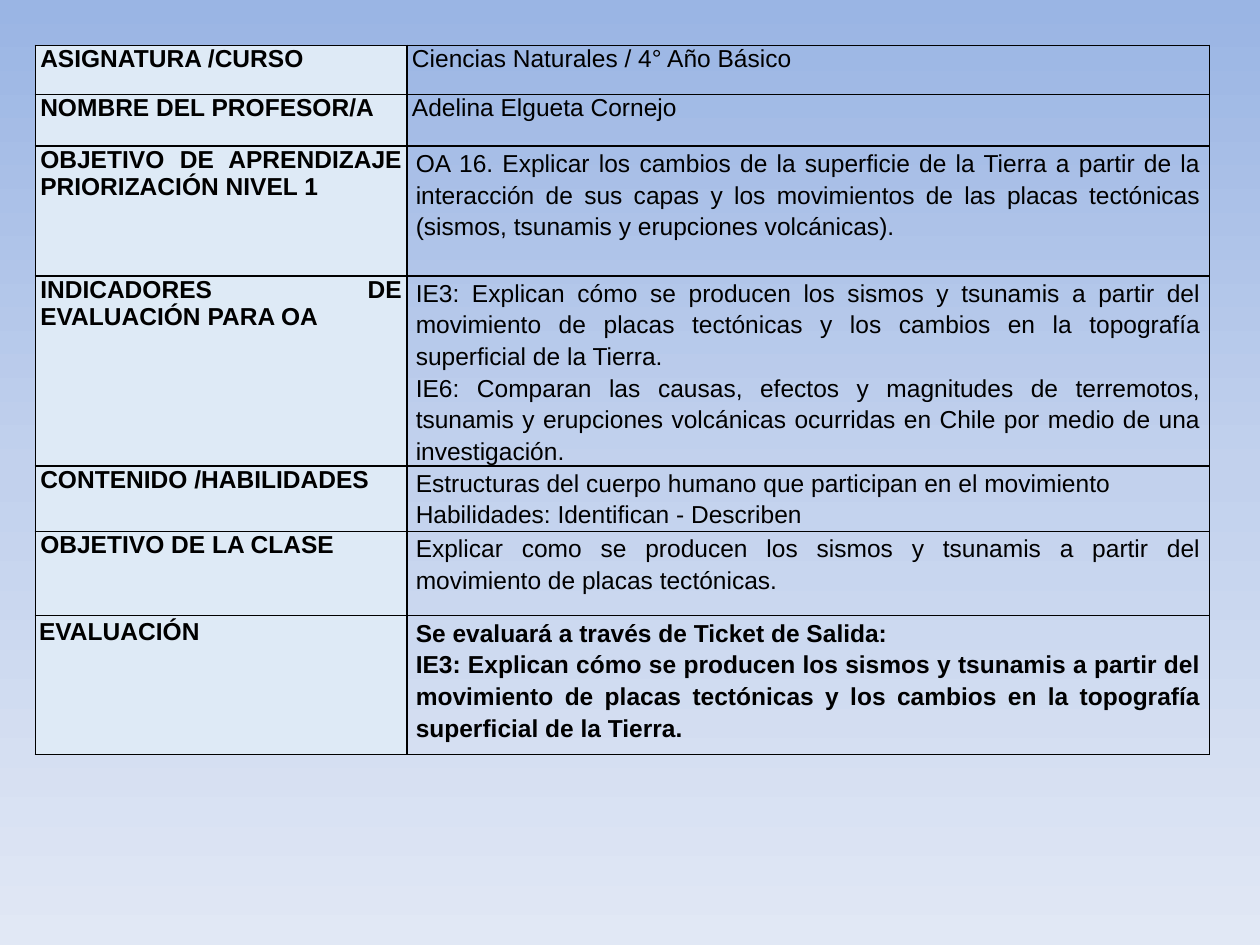
"""Build a lesson plan slide with one two-column table."""
import copy

import lxml.etree
import pptx
import pptx.dml.color
import pptx.enum.text
import pptx.oxml.ns
import pptx.util

Inches = pptx.util.Inches
RGB = pptx.dml.color.RGBColor.from_string
qn = pptx.oxml.ns.qn

COLORS = {"text": "000000", "border": "000000", "label": "DEEAF6"}
BACKGROUND = [(0, "9AB5E4"), (0.5, "C2D1ED"), (1, "E1E8F5")]
COLUMNS = [2.95, 6.37]
TIGHT = {"margins": (0.04, 0)}
LAST = {"margins": (0.03, 0.02)}
BODY = {"margins": (0.07, 0), "spacing": 1.15}
BOLD_BODY = {**BODY, "bold": True}

IE3 = ("IE3: Explican cómo se producen los sismos y tsunamis a partir del movimiento "
       "de placas tectónicas y los cambios en la topografía superficial de la Tierra.")
ROWS = [
    (0.39, "ASIGNATURA /CURSO", TIGHT, ["Ciencias Naturales / 4° Año Básico"], TIGHT),
    (0.41, "NOMBRE DEL PROFESOR/A", TIGHT, ["Adelina Elgueta Cornejo"], TIGHT),
    (1.03, "OBJETIVO DE APRENDIZAJE PRIORIZACIÓN NIVEL 1", TIGHT, [
        "OA 16. Explicar los cambios de la superficie de la Tierra a partir de la "
        "interacción de sus capas y los movimientos de las placas tectónicas "
        "(sismos, tsunamis y erupciones volcánicas)."], BODY),
    (0.92, "INDICADORES DE EVALUACIÓN PARA OA", TIGHT, [
        IE3,
        "IE6: Comparan las causas, efectos y magnitudes de terremotos, tsunamis y "
        "erupciones volcánicas ocurridas en Chile por medio de una investigación."], BODY),
    (0.52, "CONTENIDO /HABILIDADES", TIGHT, [
        "Estructuras del cuerpo humano que participan en el movimiento",
        "Habilidades: Identifican - Describen"], BODY),
    (0.67, "OBJETIVO DE LA CLASE", TIGHT, [
        "Explicar como se producen los sismos y tsunamis a partir del movimiento "
        "de placas tectónicas."], BODY),
    (1.1, "EVALUACIÓN", LAST, ["Se evaluará a través de Ticket de Salida:", IE3], BOLD_BODY),
]


class Deck:
    """Hold the style and the current slide."""

    def __init__(self, prs):
        self.font = {"name": "Arial", "size": pptx.util.Pt(14)}
        self.s = prs.slides.add_slide(prs.slide_layouts[6])

    def background(self, stops):
        """Fill the slide with a gradient that runs downwards."""
        fill = self.s.background.fill
        fill.gradient()
        fill.gradient_angle = 270
        gs_list = self.s.background._cSld.find(".//" + qn("a:gsLst"))
        gs_list.insert(1, copy.deepcopy(gs_list[0]))
        for stop, (position, color) in zip(fill.gradient_stops, stops):
            stop.position = position
            stop.color.rgb = RGB(color)

    def borders(self, cell):
        """Draw a one-point line on every side of a cell."""
        tc_pr = cell._tc.get_or_add_tcPr()
        for side in ("lnL", "lnR", "lnT", "lnB"):
            ln = lxml.etree.SubElement(tc_pr, qn("a:" + side), w=str(pptx.util.Pt(1)))
            solid = lxml.etree.SubElement(ln, qn("a:solidFill"))
            lxml.etree.SubElement(solid, qn("a:srgbClr"), val=COLORS["border"])

    def cell(self, cell, lines, margins, bold=False, spacing=None, fill=None):
        """Write justified paragraphs into a bordered cell."""
        self.borders(cell)
        if fill:
            cell.fill.solid()
            cell.fill.fore_color.rgb = RGB(COLORS[fill])
        else:
            cell.fill.background()
        x, y = map(Inches, margins)
        for side, value in {"left": x, "right": x, "top": y, "bottom": y}.items():
            setattr(cell, "margin_" + side, value)
        tf = cell.text_frame
        tf.text = "\n".join(lines)
        for p in tf.paragraphs:
            p.alignment = pptx.enum.text.PP_ALIGN.JUSTIFY
            p.line_spacing = spacing
            for r in p.runs:
                for name, value in {**self.font, "bold": bold}.items():
                    setattr(r.font, name, value)
                r.font.color.rgb = RGB(COLORS["text"])

    def table(self, left, top, height, columns, rows):
        """Add a table of bold labels and their descriptions."""
        frame = self.s.shapes.add_table(
            len(rows), len(columns), Inches(left), Inches(top),
            Inches(sum(columns)), Inches(height))
        table = frame.table
        table.first_row = table.horz_banding = False
        for column, width in zip(table.columns, columns):
            column.width = Inches(width)
        for i, (row_height, label, label_format, lines, body_format) in enumerate(rows):
            table.rows[i].height = Inches(row_height)
            self.cell(table.cell(i, 0), [label], bold=True, fill="label", **label_format)
            self.cell(table.cell(i, 1), lines, **body_format)
        frame.height = Inches(height)


def main():
    """Build and save the presentation."""
    prs = pptx.Presentation()
    prs.slide_width, prs.slide_height = Inches(10), Inches(7.5)
    deck = Deck(prs)
    deck.background(BACKGROUND)
    deck.table(0.28, 0.36, 5.7, COLUMNS, ROWS)
    prs.save("out.pptx")


if __name__ == "__main__":
    main()
